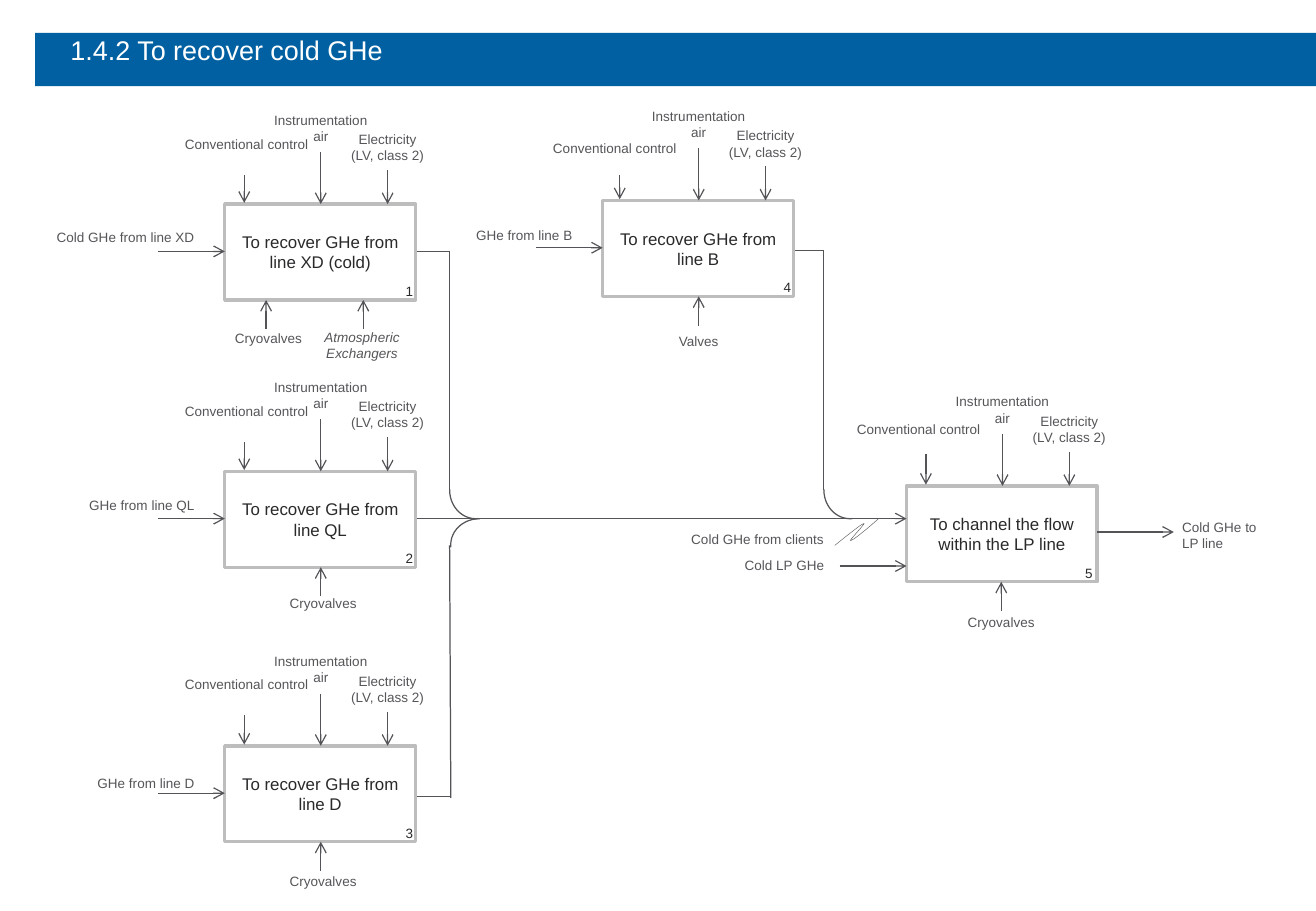
from lxml import etree
from pptx import Presentation
from pptx.dml.color import RGBColor
from pptx.enum.shapes import MSO_CONNECTOR, MSO_SHAPE
from pptx.enum.text import MSO_ANCHOR, PP_ALIGN
from pptx.oxml.ns import qn
from pptx.util import Inches, Pt

LEFT, CENTER, RIGHT = PP_ALIGN.LEFT, PP_ALIGN.CENTER, PP_ALIGN.RIGHT
TOP, MIDDLE = MSO_ANCHOR.TOP, MSO_ANCHOR.MIDDLE
RECTANGLE, ARC = MSO_SHAPE.RECTANGLE, MSO_SHAPE.ARC
STRAIGHT = MSO_CONNECTOR.STRAIGHT

BLUE = RGBColor(0x00, 0x60, 0xA1)
WHITE = RGBColor(0xFF, 0xFF, 0xFF)
BORDER = RGBColor(0xBD, 0xBD, 0xBD)
INK = RGBColor(0x2A, 0x2A, 0x2D)
LABEL = RGBColor(0x55, 0x55, 0x5A)
FLOW = RGBColor(0x53, 0x53, 0x58)

BOX_W, BOX_H = 1.57, 0.79
MECHANISM_W = 1.26

# left, top, wording, offset of the number
ACTIVITIES = [
    (1.85, 1.68, "To recover GHe from line XD (cold)", 1.38),
    (1.85, 3.88, "To recover GHe from line QL", 1.38),
    (1.85, 6.14, "To recover GHe from line D", 1.38),
    (4.96, 1.65, "To recover GHe from line B", 1.38),
    (7.46, 4.00, "To channel the flow within the LP line", 1.36),
]
# Per activity: label left and top, arrow x and start, all from the box corner
CONVENTIONAL = [
    (-0.49, -0.61, 0.16, -0.24),
    (-0.49, -0.61, 0.16, -0.24),
    (-0.49, -0.62, 0.16, -0.25),
    (-0.57, -0.55, 0.14, -0.21),
    (-0.57, -0.58, 0.16, -0.26),
]
# wording, label top from the box corner
INPUTS = [
    ("Cold GHe from line XD", 0.16),
    ("GHe from line QL", 0.16),
    ("GHe from line D", 0.19),
    ("GHe from line B", 0.17),
]
# activity index, wording, label left and top, arrow x, italic
MECHANISMS = [
    (0, "Cryovalves", 1.58, 2.67, 2.19, False),
    (0, "Atmospheric Exchangers", 2.35, 2.66, 2.99, True),
    (1, "Cryovalves", 2.03, 4.85, 2.64, False),
    (2, "Cryovalves", 2.03, 7.14, 2.64, False),
    (3, "Valves", 5.12, 2.69, 5.75, False),
    (4, "Cryovalves", 7.61, 5.01, 8.24, False),
]
PIPES = [
    (3.43, 2.07, 3.70, 2.07), (3.70, 2.07, 3.70, 4.05),
    (3.43, 6.56, 3.70, 6.56), (3.70, 4.49, 3.71, 6.57),
    (6.54, 2.06, 6.78, 2.06), (6.78, 2.06, 6.78, 4.03),
]
BENDS = [(3.70, 3.80, 180), (3.73, 4.25, 270), (6.78, 3.80, 180)]
ZIGZAG = [
    ((7.23, 4.27), (7.13, 4.36), (7.02, 4.45), (7.00, 4.45)),
    ((7.00, 4.45), (6.98, 4.46), (7.13, 4.30), (7.11, 4.31)),
    ((7.11, 4.31), (7.09, 4.31), (6.91, 4.46), (6.87, 4.49)),
]


def write(frame, text, size=8, color=LABEL, align=CENTER, anchor=TOP,
          italic=False, wrap=True):
    """Fill a text frame, one paragraph for each line of text."""
    frame.word_wrap = wrap
    frame.vertical_anchor = anchor
    for index, line in enumerate(text.split("\n")):
        paragraph = frame.paragraphs[0] if index == 0 else frame.add_paragraph()
        paragraph.text = line
        paragraph.alignment = align
        font = paragraph.font
        font.name, font.size, font.italic = "Arial", Pt(size), italic
        font.color.rgb = color


def bezier(points, t):
    weights = ((1 - t) ** 3, 3 * t * (1 - t) ** 2, 3 * t * t * (1 - t), t ** 3)
    return tuple(Inches(sum(w * p[axis] for w, p in zip(weights, points)))
                 for axis in (0, 1))


class Diagram:
    def __init__(self, slide):
        self.slide = slide
        self.shapes = slide.shapes

    def title(self, text):
        heading = self.shapes.title
        heading.left, heading.top = Inches(0.58), Inches(0.28)
        heading.width, heading.height = Inches(9.75), Inches(0.39)
        frame = heading.text_frame
        frame.margin_left = frame.margin_right = 0
        frame.margin_top = frame.margin_bottom = 0
        write(frame, text, size=16, color=WHITE, align=LEFT)

    def shape(self, kind, x, y, w, h, fill=None, line=None, weight=0.75):
        item = self.shapes.add_shape(kind, Inches(x), Inches(y), Inches(w), Inches(h))
        return self.style(item, fill, line, weight)

    def style(self, item, fill, line, weight):
        item.shadow.inherit = False
        if fill is None:
            item.fill.background()
        else:
            item.fill.solid()
            item.fill.fore_color.rgb = fill
        if line is None:
            item.line.fill.background()
        else:
            item.line.color.rgb = line
            item.line.width = Pt(weight)
        return item

    def band(self):
        """Add the title band behind everything else."""
        band = self.shape(RECTANGLE, 0.29, 0.27, 10.54, 0.44, fill=BLUE)
        self.shapes._spTree.insert(2, band._element)

    def label(self, text, x, y, w, h=0.24, **style):
        box = self.shapes.add_textbox(Inches(x), Inches(y), Inches(w), Inches(h))
        write(box.text_frame, text, **style)

    def line(self, x1, y1, x2, y2, arrow=True):
        line = self.shapes.add_connector(
            STRAIGHT, Inches(x1), Inches(y1), Inches(x2), Inches(y2))
        line.line.color.rgb = FLOW
        line.line.width = Pt(0.75)
        if arrow:
            etree.SubElement(line.line._get_or_add_ln(), qn("a:tailEnd"), type="arrow")
        etree.SubElement(line._element.spPr, qn("a:effectLst"))

    def bend(self, x, y, rotation):
        arc = self.shape(ARC, x, y, 0.43, 0.47, line=LABEL)
        arc.adjustments[0], arc.adjustments[1] = 159.04, 0.9
        arc.rotation = rotation

    def curve(self, segments, steps=12):
        builder = self.shapes.build_freeform(*bezier(segments[0], 0))
        builder.add_line_segments(
            [bezier(segment, step / steps)
             for segment in segments for step in range(1, steps + 1)], close=False)
        self.style(builder.convert_to_shape(), None, LABEL, 0.25)

    def activity(self, number, x, y, text, number_dx):
        box = self.shape(RECTANGLE, x, y, BOX_W, BOX_H, WHITE, BORDER, 2)
        write(box.text_frame, text, size=10, color=INK, anchor=MIDDLE)
        self.label(str(number), x + number_dx, y + 0.6, 0.27,
                   color=INK, align=RIGHT, wrap=False)

    def controls(self, x, y, label_dx, label_dy, arrow_dx, arrow_dy):
        """Add the three supplies that enter a box from above."""
        self.label("Electricity\n(LV, class 2)", x + 0.87, y - 0.65, 0.94, 0.37)
        self.line(x + 1.34, y - 0.28, x + 1.34, y)
        self.label("Instrumentation air", x + 0.24, y - 0.81, 1.1, 0.37)
        self.line(x + 0.79, y - 0.43, x + 0.79, y)
        self.label("Conventional control", x + label_dx, y + label_dy, 1.34)
        self.line(x + arrow_dx, y + arrow_dy, x + arrow_dx, y - 0.01)


def main():
    deck = Presentation()
    deck.slide_width, deck.slide_height = Inches(10.83), Inches(7.5)
    diagram = Diagram(deck.slides.add_slide(deck.slide_layouts[5]))
    diagram.band()
    diagram.title("1.4.2 To recover cold GHe")

    for number, (activity, control) in enumerate(zip(ACTIVITIES, CONVENTIONAL), 1):
        diagram.activity(number, *activity)
        diagram.controls(*activity[:2], *control)
    for (x, y, *_), (text, dy) in zip(ACTIVITIES, INPUTS):
        diagram.label(text, x - 1.63, y + dy, 1.48, align=RIGHT)
        diagram.line(x - 0.55, y + 0.39, x, y + 0.39)
    for index, text, x, y, arrow_x, italic in MECHANISMS:
        bottom = ACTIVITIES[index][1] + BOX_H
        height = 0.37 if italic else 0.24
        diagram.label(text, x, y, MECHANISM_W, height, italic=italic)
        diagram.line(arrow_x, bottom + 0.24, arrow_x, bottom)

    for pipe in PIPES:
        diagram.line(*pipe, arrow=False)
    for bend in BENDS:
        diagram.bend(*bend)
    diagram.line(3.43, 4.27, 7.46, 4.27)
    diagram.curve(ZIGZAG)
    diagram.label("Cold GHe from clients", 5.59, 4.32, 1.42, align=LEFT)
    diagram.label("Cold LP GHe", 6.03, 4.54, 0.94, align=LEFT)
    diagram.line(6.91, 4.66, 7.46, 4.66)
    diagram.label("Cold GHe to LP line", 9.63, 4.22, 0.94, 0.37, align=LEFT)
    diagram.line(9.03, 4.38, 9.66, 4.38)
    deck.save("out.pptx")


if __name__ == "__main__":
    main()
